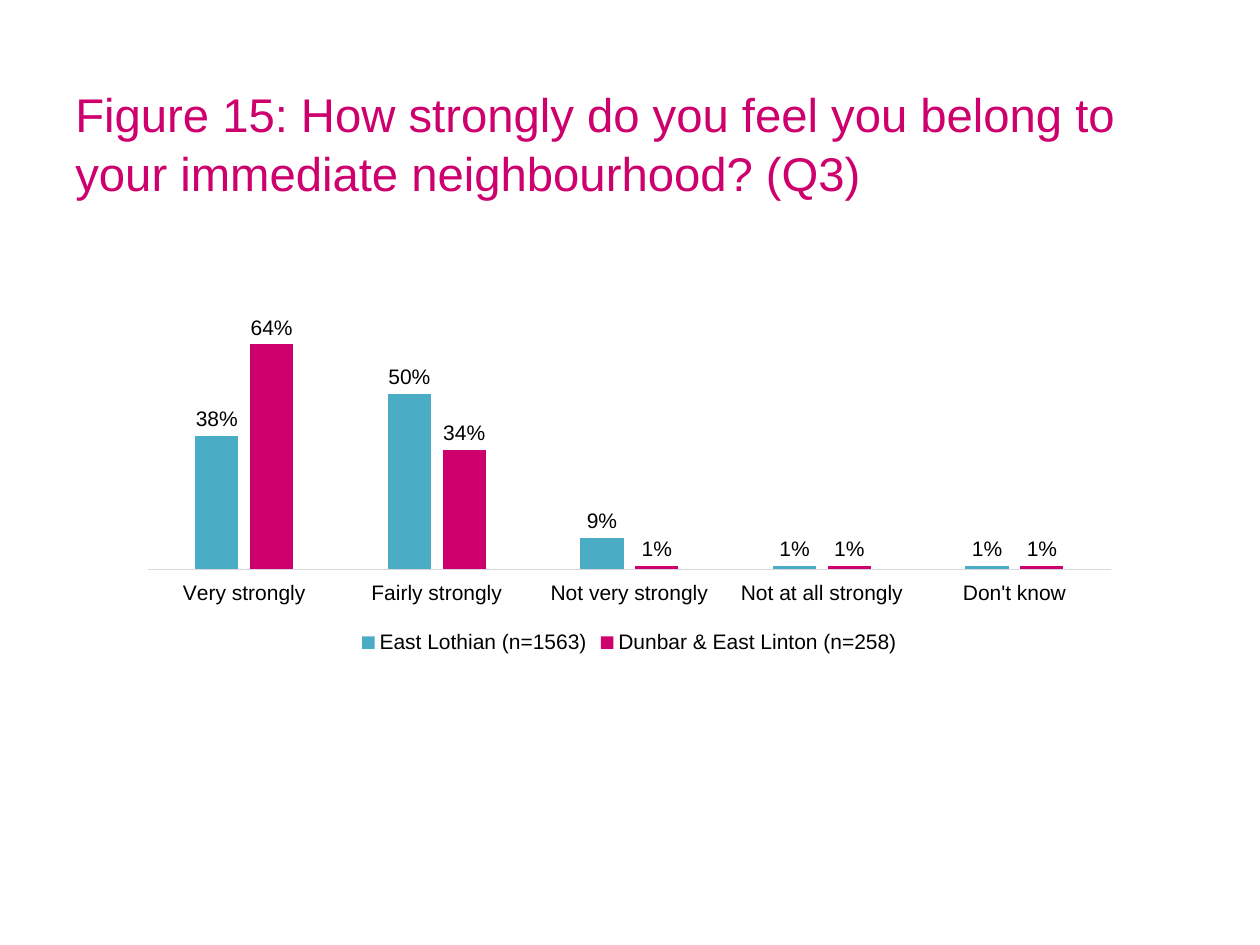
"""Build the neighbourhood belonging slide with its clustered column chart."""
from lxml.etree import SubElement
from pptx import Presentation
from pptx.chart.data import CategoryChartData
from pptx.dml.color import RGBColor
from pptx.enum.chart import XL_CHART_TYPE as ChartType
from pptx.enum.chart import XL_LABEL_POSITION as LabelPosition
from pptx.enum.chart import XL_LEGEND_POSITION as LegendPosition
from pptx.enum.chart import XL_TICK_LABEL_POSITION as TickLabels
from pptx.enum.chart import XL_TICK_MARK as TickMark
from pptx.enum.text import MSO_ANCHOR as Anchor
from pptx.oxml.ns import qn
from pptx.util import Emu, Pt

PX = 914400 // 126
COLORS = {"magenta": "CD006E", "teal": "4BACC6", "text": "000000", "axis": "D9D9D9"}
FONT = "Arial"
TITLE = "Figure 15: How strongly do you feel you belong to your immediate neighbourhood? (Q3)"
ANSWERS = ["Very strongly", "Fairly strongly", "Not very strongly",
           "Not at all strongly", "Don't know"]
AREAS = [
    ("East Lothian (n=1563)", "teal", [0.38, 0.5, 0.09, 0.01, 0.01]),
    ("Dunbar & East Linton (n=258)", "magenta", [0.64, 0.34, 0.01, 0.01, 0.01]),
]
PLOT_LAYOUT = [("layoutTarget", "inner"), ("xMode", "edge"), ("yMode", "edge"),
               ("x", 0.02), ("y", 0.1), ("w", 0.96), ("h", 0.66)]


def px(*lengths):
    return [Emu(length * PX) for length in lengths]


def rgb(name):
    return RGBColor.from_string(COLORS[name])


def style_font(font, size, color):
    font.name = FONT
    font.size = Pt(size)
    font.color.rgb = rgb(color)


def add_title(slide, text, box):
    frame = slide.shapes.add_textbox(*px(*box)).text_frame
    frame.word_wrap = True
    frame.vertical_anchor = Anchor.MIDDLE
    heading = frame.paragraphs[0]
    heading.text = text
    heading.line_spacing = 1.05
    style_font(heading.font, 27, "magenta")


def place_plot(chart):
    plot_area = chart.plots[0]._element.getparent()
    layout = plot_area.find(qn("c:layout"))
    if layout is None:
        layout = SubElement(plot_area, qn("c:layout"))
        plot_area.insert(0, layout)
    manual = SubElement(layout, qn("c:manualLayout"))
    for tag, value in PLOT_LAYOUT:
        SubElement(manual, qn(f"c:{tag}")).set("val", str(value))


def style_axes(chart):
    answers = chart.category_axis
    answers.major_tick_mark = answers.minor_tick_mark = TickMark.NONE
    answers.tick_label_position = TickLabels.LOW
    answers.format.line.color.rgb = rgb("axis")
    answers.format.line.width = Pt(0.75)
    style_font(answers.tick_labels.font, 12, "text")
    shares = chart.value_axis
    shares.minimum_scale, shares.maximum_scale = 0, 0.7
    shares.has_major_gridlines = False
    shares.visible = False


def style_series(series, color):
    series.format.fill.solid()
    series.format.fill.fore_color.rgb = rgb(color)
    series.invert_if_negative = False
    labels = series.data_labels
    labels.show_value = True
    labels.position = LabelPosition.OUTSIDE_END
    labels.number_format = "0%"
    labels.number_format_is_linked = False
    style_font(labels.font, 12, "text")


def add_column_chart(slide, box):
    data = CategoryChartData(number_format="0%")
    data.categories = ANSWERS
    for name, _, shares in AREAS:
        data.add_series(name, shares)
    chart = slide.shapes.add_chart(ChartType.COLUMN_CLUSTERED, *px(*box), data).chart
    chart.has_title = False
    style_font(chart.font, 12, "text")
    columns = chart.plots[0]
    columns.gap_width, columns.overlap = 219, -27
    columns.vary_by_categories = False
    for series, (_, color, _) in zip(columns.series, AREAS):
        style_series(series, color)
    style_axes(chart)
    chart.has_legend = True
    chart.legend.position = LegendPosition.BOTTOM
    chart.legend.include_in_layout = False
    style_font(chart.legend.font, 12, "text")
    place_plot(chart)


def main():
    deck = Presentation()
    deck.slide_width, deck.slide_height = px(1260, 945)
    slide = deck.slides.add_slide(deck.slide_layouts[6])
    add_title(slide, TITLE, (63, 38, 1134, 207))
    add_column_chart(slide, (128, 286, 1003, 373))
    deck.save("out.pptx")


if __name__ == "__main__":
    main()
